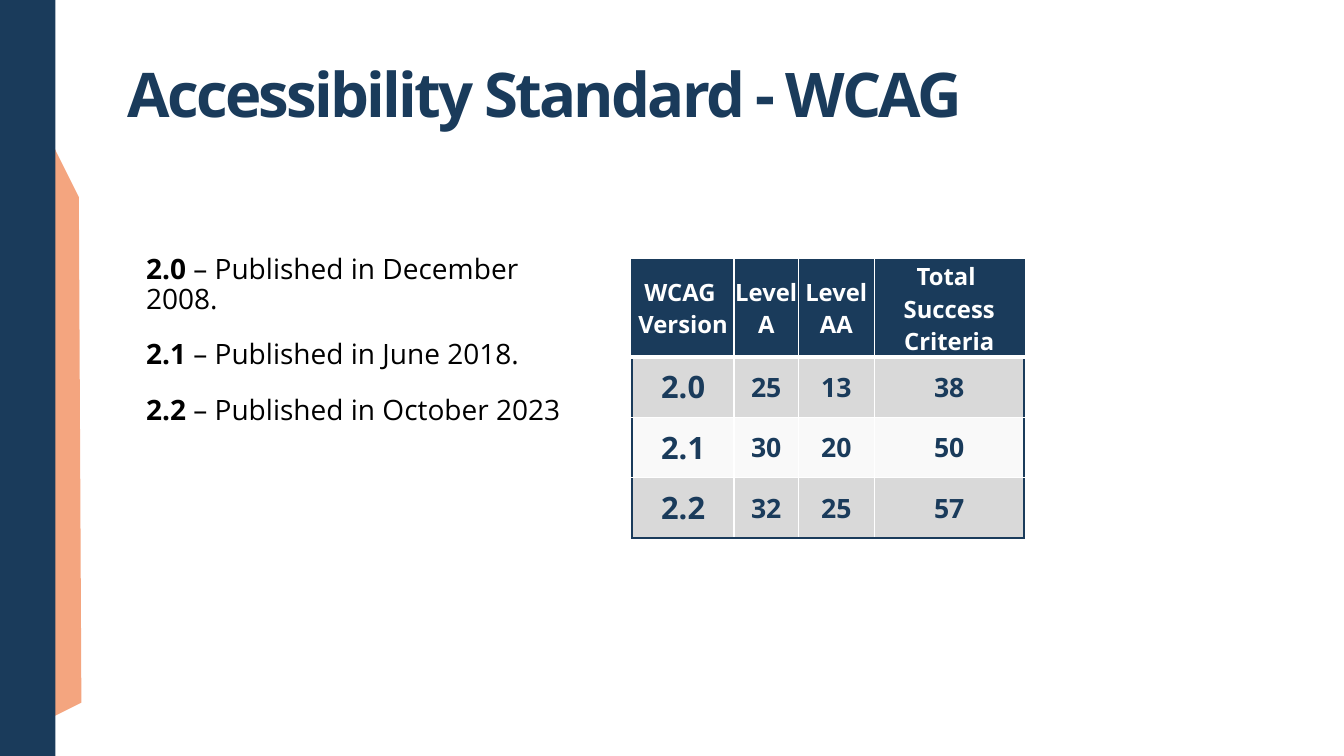
from dataclasses import dataclass

from lxml import etree
from pptx import Presentation
from pptx.dml.color import RGBColor
from pptx.enum.shapes import MSO_SHAPE
from pptx.enum.text import MSO_ANCHOR, PP_ALIGN
from pptx.oxml.ns import qn
from pptx.slide import Slide
from pptx.table import _Cell
from pptx.text.text import Font
from pptx.util import Inches, Pt

RECTANGLE, DIAGONAL_STRIPE = MSO_SHAPE.RECTANGLE, MSO_SHAPE.DIAGONAL_STRIPE
MIDDLE, BOTTOM = MSO_ANCHOR.MIDDLE, MSO_ANCHOR.BOTTOM
CENTER = PP_ALIGN.CENTER

NAVY = RGBColor(0x1A, 0x3B, 0x5B)
ORANGE = RGBColor(0xEB, 0x4D, 0x00)
WHITE = RGBColor(0xFF, 0xFF, 0xFF)
BLACK = RGBColor(0x00, 0x00, 0x00)
GREY = RGBColor(0xD9, 0xD9, 0xD9)
PALE = RGBColor(0xF9, 0xF9, 0xF9)
FONT = "Open Sans"


@dataclass(frozen=True)
class Release:
    version: str
    published: str
    level_a: int
    level_aa: int
    total: int


@dataclass(frozen=True)
class Border:
    color: RGBColor
    points: float


RELEASES = [
    Release("2.0", "– Published in December 2008.", 25, 13, 38),
    Release("2.1", "– Published in June 2018.", 30, 20, 50),
    Release("2.2", "– Published in October 2023", 32, 25, 57),
]
HEADINGS = ["WCAG \nVersion", "Level\nA", "Level\nAA", "Total \nSuccess Criteria"]
COLUMN_WIDTHS = [1.01, 0.64, 0.75, 1.49]
ROW_HEIGHTS = [0.96, 0.6, 0.6, 0.6]

OUTER = Border(NAVY, 1.5)
INNER = Border(WHITE, 1)
UNDER_HEADINGS = Border(WHITE, 3)


def style_font(font: Font, size: float, color: RGBColor, bold: bool) -> None:
    font.name = FONT
    font.size = Pt(size)
    font.bold = bold
    font.color.rgb = color


def add_side_decoration(slide: Slide) -> None:
    stripe = slide.shapes.add_shape(
        DIAGONAL_STRIPE, Inches(-0.81), Inches(1.61), Inches(2.57), Inches(5.22))
    stripe.adjustments[0] = 0.862
    stripe.rotation = 153.5
    band = slide.shapes.add_shape(RECTANGLE, 0, 0, Inches(0.55), Inches(7.5))
    for shape, color in ((stripe, ORANGE), (band, NAVY)):
        shape.shadow.inherit = False
        shape.fill.solid()
        shape.fill.fore_color.rgb = color
        shape.line.fill.background()
    stripe_color = stripe.fill._xPr.find(qn("a:solidFill"))[0]
    etree.SubElement(stripe_color, qn("a:alpha"), val="50000")


def add_title(slide: Slide) -> None:
    title = slide.shapes.add_textbox(Inches(1.17), Inches(0.4), Inches(11), Inches(0.95))
    frame = title.text_frame
    frame.word_wrap = True
    frame.vertical_anchor = BOTTOM
    frame.text = "Accessibility Standard - WCAG"
    heading = frame.paragraphs[0]
    heading.line_spacing = 0.9
    run = heading.runs[0]
    style_font(run.font, 44, NAVY, True)
    run.font._element.set("spc", "-200")


def add_publication_dates(slide: Slide) -> None:
    dates = slide.shapes.add_textbox(Inches(1.35), Inches(2.48), Inches(4.32), Inches(1.95))
    frame = dates.text_frame
    frame.word_wrap = True
    for index, release in enumerate(RELEASES):
        entry = frame.add_paragraph() if index else frame.paragraphs[0]
        entry.line_spacing = 0.9
        entry.space_before = Pt(9 if index else 0)
        entry.space_after = Pt(9)
        for text, bold in ((f"{release.version} ", True), (release.published, False)):
            run = entry.add_run()
            run.text = text
            style_font(run.font, 20, BLACK, bold)


def set_borders(cell: _Cell, borders: dict[str, Border]) -> None:
    """Draw the cell's edges; the keys follow the order the schema asks for."""
    properties = cell._tc.get_or_add_tcPr()
    for side, border in borders.items():
        line = etree.SubElement(properties, qn(f"a:ln{side}"), w=str(Pt(border.points)))
        fill = etree.SubElement(line, qn("a:solidFill"))
        etree.SubElement(fill, qn("a:srgbClr"), val=str(border.color))


def fill_cell(cell: _Cell, text: str, size: float, color: RGBColor, fill: RGBColor) -> None:
    cell.margin_left = cell.margin_right = cell.margin_top = cell.margin_bottom = 0
    cell.vertical_anchor = MIDDLE
    cell.fill.solid()
    cell.fill.fore_color.rgb = fill
    cell.text_frame.text = text
    for paragraph in cell.text_frame.paragraphs:
        paragraph.alignment = CENTER
        for run in paragraph.runs:
            style_font(run.font, size, color, True)


def add_criteria_table(slide: Slide) -> None:
    rows = [HEADINGS] + [
        [r.version, str(r.level_a), str(r.level_aa), str(r.total)] for r in RELEASES]
    last_row, last_column = len(rows) - 1, len(HEADINGS) - 1
    table = slide.shapes.add_table(
        len(rows), len(HEADINGS), Inches(6.27), Inches(2.58),
        Inches(sum(COLUMN_WIDTHS)), Inches(sum(ROW_HEIGHTS))).table
    table.first_row = table.horz_banding = False
    for column, width in zip(table.columns, COLUMN_WIDTHS):
        column.width = Inches(width)
    for row, height in zip(table.rows, ROW_HEIGHTS):
        row.height = Inches(height)

    for i, texts in enumerate(rows):
        for j, text in enumerate(texts):
            cell = table.cell(i, j)
            below = UNDER_HEADINGS if i == 0 else OUTER if i == last_row else INNER
            set_borders(cell, {
                "L": OUTER if j == 0 else INNER,
                "R": OUTER if j == last_column else INNER,
                "T": OUTER if i == 0 else INNER,
                "B": below,
            })
            if i == 0:
                fill_cell(cell, text, 17, WHITE, NAVY)
            else:
                fill_cell(cell, text, 19 if j else 22, NAVY, GREY if i % 2 else PALE)


def main() -> None:
    presentation = Presentation()
    presentation.slide_width = Inches(13.33)
    presentation.slide_height = Inches(7.5)
    slide = presentation.slides.add_slide(presentation.slide_layouts[6])
    add_side_decoration(slide)
    add_title(slide)
    add_criteria_table(slide)
    add_publication_dates(slide)
    presentation.save("out.pptx")


if __name__ == "__main__":
    main()
